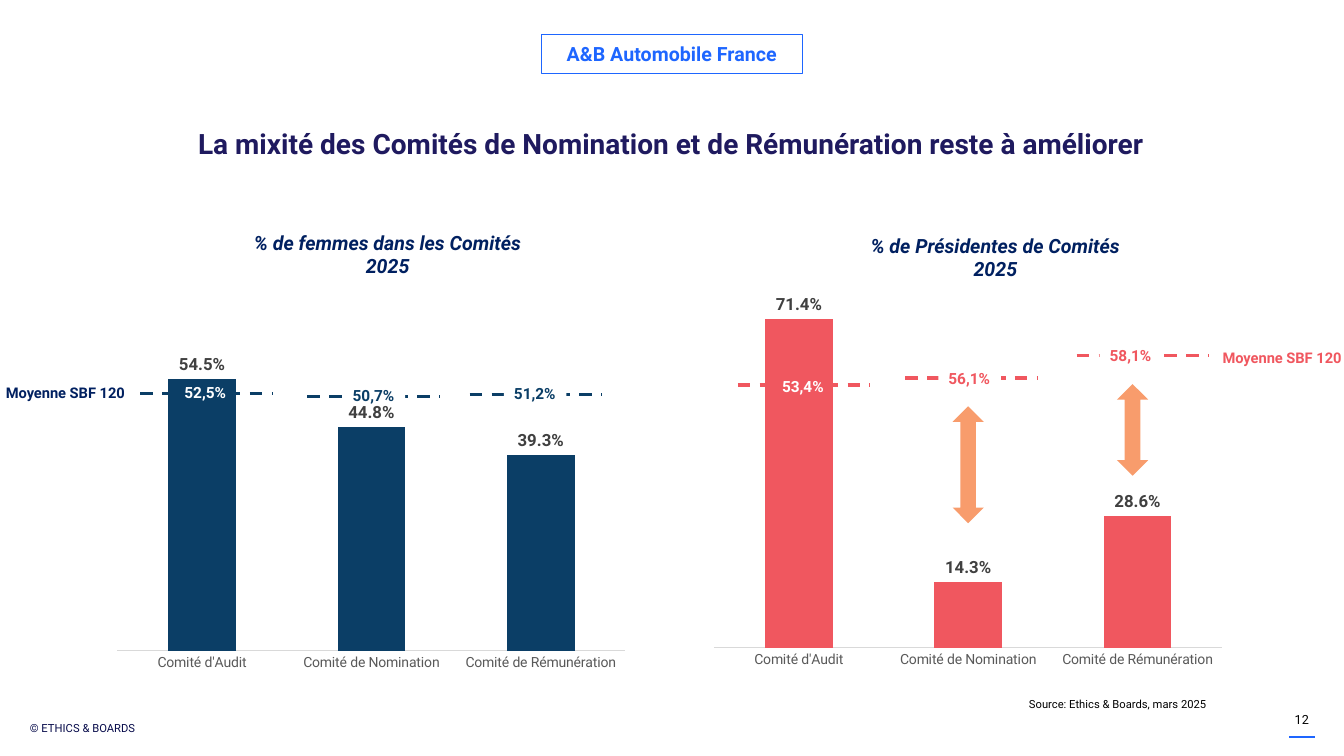
from lxml import etree
from pptx import Presentation
from pptx.chart.data import CategoryChartData
from pptx.dml.color import RGBColor
from pptx.enum.chart import XL_CHART_TYPE, XL_LABEL_POSITION, XL_TICK_MARK
from pptx.enum.dml import MSO_LINE
from pptx.enum.shapes import MSO_CONNECTOR, MSO_SHAPE
from pptx.enum.text import MSO_ANCHOR, PP_ALIGN
from pptx.oxml import parse_xml
from pptx.oxml.ns import nsdecls, qn
from pptx.util import Pt

COLUMNS = XL_CHART_TYPE.COLUMN_CLUSTERED
OUTSIDE_END = XL_LABEL_POSITION.OUTSIDE_END
NO_TICK = XL_TICK_MARK.NONE
DASH = MSO_LINE.DASH
STRAIGHT = MSO_CONNECTOR.STRAIGHT
RECTANGLE, DOUBLE_ARROW = MSO_SHAPE.RECTANGLE, MSO_SHAPE.UP_DOWN_ARROW
TOP, MIDDLE = MSO_ANCHOR.TOP, MSO_ANCHOR.MIDDLE
LEFT, CENTER = PP_ALIGN.LEFT, PP_ALIGN.CENTER

FONT = "Roboto"
BLUE, NAVY, CORAL, DARK = "1E66FF", "0B3E66", "F0575F", "002060"
WHITE, BLACK = "FFFFFF", "000000"
color = RGBColor.from_string


def write(shape, lines, size, text_color, bold=False, italic=False,
          align=LEFT, anchor=TOP, wrap=True):
    frame = shape.text_frame
    frame.word_wrap = wrap
    frame.vertical_anchor = anchor
    for index, line in enumerate(lines):
        paragraph = frame.add_paragraph() if index else frame.paragraphs[0]
        paragraph.alignment = align
        run = paragraph.add_run()
        run.text = line
        run.font.name = FONT
        run.font.size = Pt(size)
        run.font.bold = bold
        run.font.italic = italic
        run.font.color.rgb = color(text_color)


def add_line(left, y, width, line_color, weight):
    line = shapes.add_connector(STRAIGHT, Pt(left), Pt(y), Pt(left + width), Pt(y))
    line.line.color.rgb = color(line_color)
    line.line.width = Pt(weight)
    etree.SubElement(line._element.spPr, qn("a:effectLst"))
    return line


presentation = Presentation()
presentation.slide_width, presentation.slide_height = Pt(960), Pt(540)
slide = presentation.slides.add_slide(presentation.slide_layouts[5])
shapes = slide.shapes

title = shapes.title
title.left, title.top, title.width, title.height = Pt(45.4), Pt(86.4), Pt(868), Pt(31.7)
write(title, ["La mixité des Comités de Nomination et de Rémunération reste à améliorer"],
      20, "1F1A5F", bold=True, align=CENTER, anchor=MIDDLE)

banner = shapes.add_shape(RECTANGLE, Pt(386.6), Pt(24.5), Pt(186.5), Pt(28.1))
banner.shadow.inherit = False
banner.fill.background()
banner.line.color.rgb = color(BLUE)
banner.line.width = Pt(0.5)
write(banner, ["A&B Automobile France"], 14, BLUE, bold=True, align=CENTER, anchor=MIDDLE)

add_line(920.9, 526.3, 18.7, BLUE, 1.5)

for left, top, width, height, text, size, text_color, bold, align, anchor in [
    (10.8, 512.6, 96.5, 15.1, "© ETHICS & BOARDS", 8, "060A4A", False, CENTER, MIDDLE),
    (915.1, 503.3, 29.5, 21.6, "12", 9, BLACK, False, CENTER, MIDDLE),
    (727.9, 494.6, 154.1, 17.3, "Source: Ethics & Boards, mars 2025", 8, BLACK, False, LEFT, TOP),
    (-2.9, 270.7, 100.8, 20.2, "Moyenne SBF 120", 10.5, DARK, True, LEFT, TOP),
    (866.2, 245.5, 100.8, 20.2, "Moyenne SBF 120", 10.5, CORAL, True, LEFT, TOP),
]:
    box = shapes.add_textbox(Pt(left), Pt(top), Pt(width), Pt(height))
    write(box, [text], size, text_color, bold=bold, align=align, anchor=anchor, wrap=False)

for left, top, heading in [
    (167.8, 161.3, "% de femmes dans les Comités"),
    (601.9, 163.4, "% de Présidentes de Comités"),
]:
    box = shapes.add_textbox(Pt(left), Pt(top), Pt(218.2), Pt(41))
    write(box, [heading, "2025"], 14, DARK, bold=True, italic=True, align=CENTER)

chair_panel = (502.6, 193.7, 289.4, (0.714, 0.143, 0.286), 0.8, 0.91, CORAL)
women_panel = (76.3, 246.2, 237.6, (0.545, 0.448, 0.393), 0.6, 0.9, NAVY)
boxed_averages = [
    (219.6, 283, 244.8, 272.2, "50,7%", NAVY),
    (335.5, 281.5, 360, 270.7, "51,2%", NAVY),
    (646.6, 270, 670.3, 259.9, "56,1%", CORAL),
    (769, 254.2, 785.5, 243.4, "58,1%", CORAL),
]
audit_averages = [
    (100.1, 280.8, 124.6, 270, "52,5%", NAVY),
    (527, 275, 551.5, 265.7, "53,4%", CORAL),
]

for line_left, line_y, label_left, label_top, text, line_color in boxed_averages:
    add_line(line_left, line_y, 94.3, line_color, 2.25).line.dash_style = DASH
    label = shapes.add_shape(RECTANGLE, Pt(label_left), Pt(label_top), Pt(44.6), Pt(20.9))
    label.shadow.inherit = False
    label.fill.solid()
    label.fill.fore_color.rgb = color(WHITE)
    label.line.fill.background()
    write(label, [text], 11, line_color, bold=True, wrap=False)

for left, top, height, values, maximum, plot_height, bar_color in (chair_panel, women_panel):
    data = CategoryChartData(number_format="0.0%")
    data.categories = ["Comité d'Audit", "Comité de Nomination", "Comité de Rémunération"]
    data.add_series("Series 1", values)
    chart = shapes.add_chart(COLUMNS, Pt(left), Pt(top), Pt(378), Pt(height), data).chart
    chart.has_legend = False
    chart.has_title = False
    chart.font.name = FONT
    chart.font.size = Pt(10)
    chart.font.color.rgb = color(BLACK)

    value_axis = chart.value_axis
    value_axis.minimum_scale, value_axis.maximum_scale = 0, maximum
    value_axis.has_major_gridlines = False
    value_axis.visible = False
    category_axis = chart.category_axis
    category_axis.major_tick_mark = NO_TICK
    category_axis.format.line.color.rgb = color("D9D9D9")
    category_axis.format.line.width = Pt(0.75)
    category_axis.tick_labels.font.name = FONT
    category_axis.tick_labels.font.size = Pt(10)
    category_axis.tick_labels.font.color.rgb = color("595959")

    plot = chart.plots[0]
    plot.gap_width, plot.overlap = 150, -27
    plot.vary_by_categories = False
    bars = plot.series[0].format.fill
    bars.solid()
    bars.fore_color.rgb = color(bar_color)
    plot.has_data_labels = True
    labels = plot.data_labels
    labels.show_value = True
    labels.number_format, labels.number_format_is_linked = "0.0%", False
    labels.position = OUTSIDE_END
    labels.font.name = FONT
    labels.font.size = Pt(12)
    labels.font.bold = True
    labels.font.color.rgb = color("404040")

    plot_area = chart._chartSpace.chart.plotArea
    for layout in plot_area.findall(qn("c:layout")):
        plot_area.remove(layout)
    plot_area.insert(0, parse_xml(
        f'<c:layout {nsdecls("c")}><c:manualLayout><c:layoutTarget val="inner"/>'
        '<c:xMode val="edge"/><c:yMode val="edge"/>'
        f'<c:x val="0.02"/><c:y val="0.02"/><c:w val="0.96"/><c:h val="{plot_height}"/>'
        '</c:manualLayout></c:layout>'))

for line_left, line_y, label_left, label_top, text, line_color in audit_averages:
    add_line(line_left, line_y, 94.3, line_color, 2.25).line.dash_style = DASH
    label = shapes.add_textbox(Pt(label_left), Pt(label_top), Pt(44.6), Pt(20.9))
    write(label, [text], 11, WHITE, bold=True, wrap=False)

for left, top, height in [(680.4, 290.2, 83.5), (797.8, 274.3, 65.5)]:
    arrow = shapes.add_shape(DOUBLE_ARROW, Pt(left), Pt(top), Pt(22.3), Pt(height))
    arrow.shadow.inherit = False
    arrow.fill.solid()
    arrow.fill.fore_color.rgb = color("F89C6C")
    arrow.line.fill.background()

presentation.save("out.pptx")
